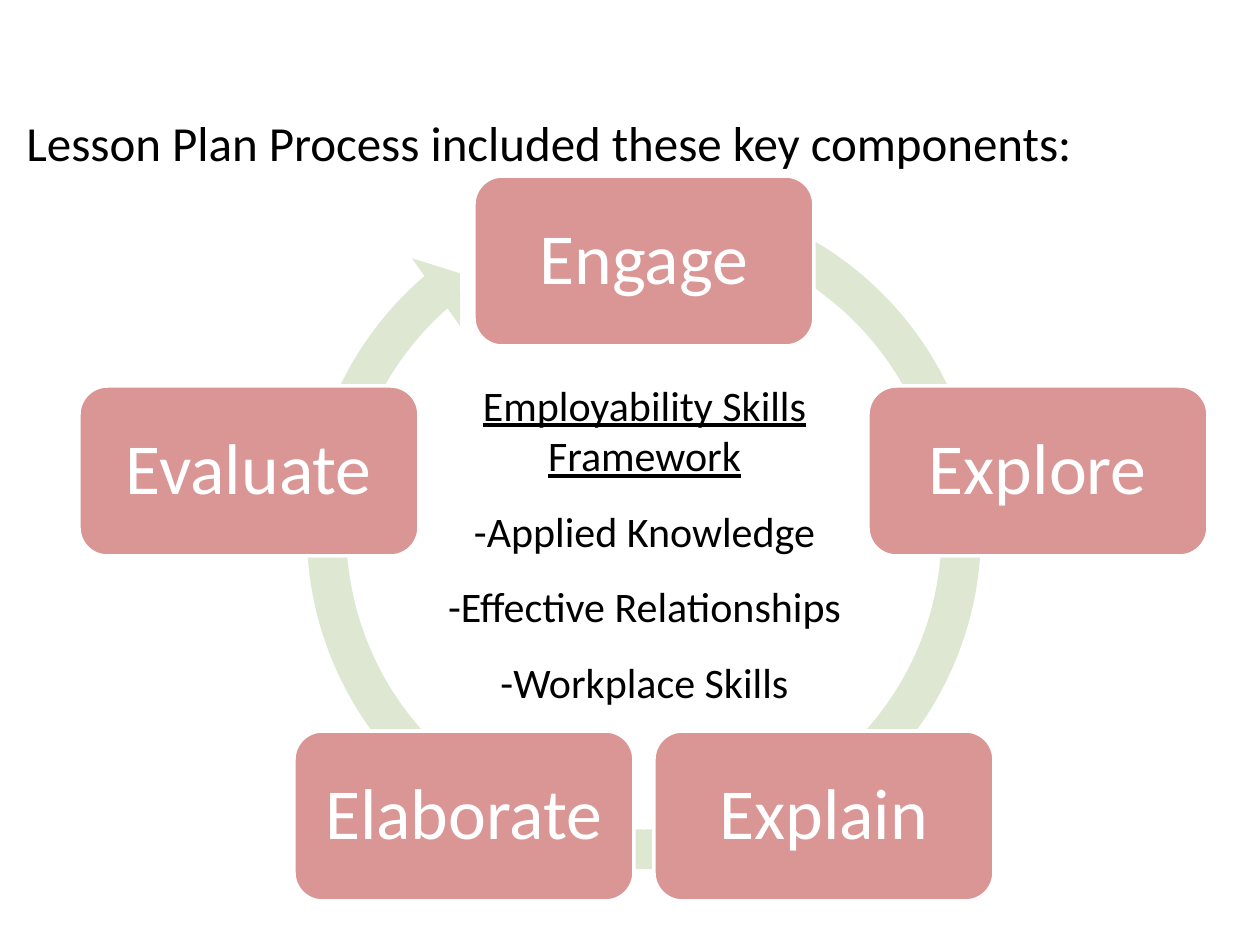
from dataclasses import dataclass

import pptx
import pptx.dml.color
import pptx.enum.shapes
import pptx.enum.text
import pptx.util

EMU_PER_PX = 914400 / 126


@dataclass(frozen=True)
class Theme:
    font: str = "Calibri"
    ink: str = "000000"
    paper: str = "FFFFFF"
    stage: str = "D99694"
    ring: str = "DEE7D1"
    title_size: int = 28
    stage_size: int = 41
    body_size: int = 24
    outline: int = 2


THEME = Theme()
STAGE_WIDTH, STAGE_HEIGHT = 340, 170
STAGE_PADDING = 21
STAGES = [
    ("Engage", 474, 176),
    ("Explore", 868, 386),
    ("Explain", 654, 731),
    ("Elaborate", 294, 731),
    ("Evaluate", 79, 386),
]
SKILLS = ["-Applied Knowledge", "-Effective Relationships", "-Workplace Skills"]


def px(length):
    return pptx.util.Emu(round(length * EMU_PER_PX))


def rgb(value):
    return pptx.dml.color.RGBColor.from_string(value)


def write(para, text, size, color=THEME.ink, underline=None, line_spacing=None):
    para.alignment = pptx.enum.text.PP_ALIGN.CENTER
    if line_spacing:
        para.line_spacing = line_spacing
    span = para.add_run()
    span.text = text
    span.font.name = THEME.font
    span.font.size = pptx.util.Pt(size)
    span.font.color.rgb = rgb(color)
    span.font.underline = underline


def add_filled_shape(page, kind, left, top, width, height, fill):
    shape = page.shapes.add_shape(kind, px(left), px(top), px(width), px(height))
    shape.shadow.inherit = False
    shape.fill.solid()
    shape.fill.fore_color.rgb = rgb(fill)
    shape.line.fill.background()
    return shape


def add_text_frame(page, left, top, width, height, anchor):
    box = page.shapes.add_textbox(px(left), px(top), px(width), px(height))
    frame = box.text_frame
    frame.word_wrap = True
    frame.vertical_anchor = anchor
    return frame


def add_cycle_arrow(page):
    arrow = add_filled_shape(
        page, pptx.enum.shapes.MSO_SHAPE.CIRCULAR_ARROW, 285, 173, 718, 718, THEME.ring
    )
    # Band width, head angle, end angle, start angle, head width
    for index, value in enumerate([0.055, 3.307, 137.439, 174.055, 0.058]):
        arrow.adjustments[index] = value


def add_stage(page, name, left, top):
    stage = add_filled_shape(
        page, pptx.enum.shapes.MSO_SHAPE.ROUNDED_RECTANGLE,
        left, top, STAGE_WIDTH, STAGE_HEIGHT, THEME.stage,
    )
    stage.line.color.rgb = rgb(THEME.paper)
    stage.line.width = pptx.util.Pt(THEME.outline)
    frame = stage.text_frame
    frame.word_wrap = True
    frame.vertical_anchor = pptx.enum.text.MSO_ANCHOR.MIDDLE
    frame.margin_left = frame.margin_right = px(STAGE_PADDING)
    frame.margin_top = frame.margin_bottom = px(STAGE_PADDING)
    write(frame.paragraphs[0], name, THEME.stage_size, color=THEME.paper, line_spacing=0.9)


def add_title(page):
    frame = add_text_frame(page, 0, 84, 1109, 115, pptx.enum.text.MSO_ANCHOR.MIDDLE)
    write(
        frame.paragraphs[0],
        "Lesson Plan Process included these key components: ",
        THEME.title_size,
    )


def add_skills(page):
    frame = add_text_frame(page, 420, 373, 449, 466, pptx.enum.text.MSO_ANCHOR.TOP)
    write(
        frame.paragraphs[0], "Employability Skills Framework",
        THEME.body_size, underline=True,
    )
    for skill in SKILLS:
        write(frame.add_paragraph(), skill, THEME.body_size, line_spacing=1.5)


def main():
    deck = pptx.Presentation()
    deck.slide_width, deck.slide_height = px(1260), px(945)
    page = deck.slides.add_slide(deck.slide_layouts[6])
    add_cycle_arrow(page)
    for name, left, top in STAGES:
        add_stage(page, name, left, top)
    add_title(page)
    add_skills(page)
    deck.save("out.pptx")


if __name__ == "__main__":
    main()
